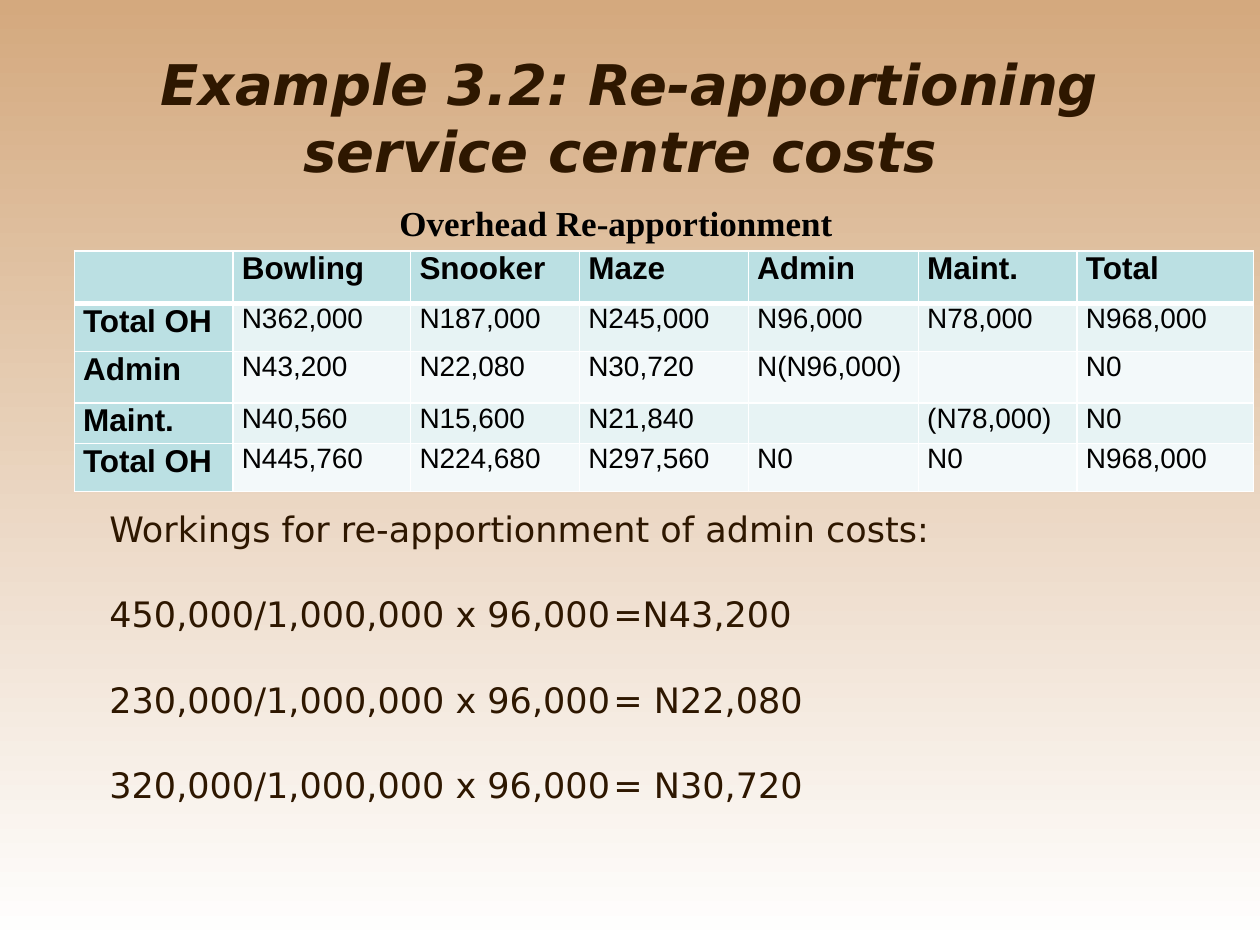
"""Build the slide on re-apportioning service centre costs."""
from dataclasses import dataclass

import pptx
import pptx.dml.color
import pptx.enum.text
import pptx.oxml
import pptx.oxml.ns
import pptx.util
from pptx.util import Inches

ALIGN = pptx.enum.text.PP_ALIGN
ANCHOR = pptx.enum.text.MSO_ANCHOR
BROWN, BLACK, WHITE = "2E1700", "000000", "FFFFFF"
HEADER_FILL, BAND_FILLS = "BBE0E3", ("E7F3F4", "F3F9FA")


@dataclass(frozen=True)
class TextStyle:
    font: str
    size: int
    color: str
    bold: bool = False
    italic: bool = False


@dataclass(frozen=True)
class TextBlock:
    left: float
    top: float
    width: float
    height: float
    lines: tuple[str, ...]
    style: TextStyle
    align: ALIGN
    anchor: ANCHOR = ANCHOR.MIDDLE
    wrap: bool = True
    gap: float = 0
    bottom_inset: float = 0.05


HEADING = TextStyle("Arial", 18, BLACK, bold=True)
FIGURE = TextStyle("Arial", 16, BLACK)

BLOCKS = (
    TextBlock(0.5, 0.3, 9, 1.25,
              ("Example 3.2: Re-apportioning service centre costs ",),
              TextStyle("DejaVu Sans", 32, BROWN, bold=True, italic=True), ALIGN.CENTER),
    TextBlock(3.06, 1.55, 3.66, 0.44, ("Overhead Re-apportionment",),
              TextStyle("Times New Roman", 20, BLACK, bold=True), ALIGN.CENTER,
              anchor=ANCHOR.TOP, wrap=False),
    TextBlock(0.77, 4.93, 9, 1.25,
              ("Workings for re-apportionment of admin costs:",
               "450,000/1,000,000 x 96,000\t=N43,200",
               "230,000/1,000,000 x 96,000\t= N22,080",
               "320,000/1,000,000 x 96,000\t= N30,720"),
              TextStyle("DejaVu Sans", 20, BROWN), ALIGN.JUSTIFY,
              gap=24.9, bottom_inset=0.74),
)

COLUMN_WIDTHS = (1.26, 1.41, 1.34, 1.34, 1.35, 1.26, 1.4)
ROW_HEIGHTS = (0.42, 0.38, 0.41, 0.32, 0.38)
OVERHEADS = (
    ("", "Bowling", "Snooker", "Maze", "Admin", "Maint.", "Total"),
    ("Total OH", "N362,000", "N187,000", "N245,000", "N96,000", "N78,000", "N968,000"),
    ("Admin", "N43,200", "N22,080", "N30,720", "N(N96,000)", "", "N0"),
    ("Maint.", "N40,560", "N15,600", "N21,840", "", "(N78,000)", "N0"),
    ("Total OH", "N445,760", "N224,680", "N297,560", "N0", "N0", "N968,000"),
)


def rgb(value: str) -> pptx.dml.color.RGBColor:
    """Turn a hex string into a colour."""
    return pptx.dml.color.RGBColor.from_string(value)


def add_span(para, text: str, style: TextStyle) -> None:
    """Append one styled run to a paragraph."""
    span = para.add_run()
    span.text = text
    span.font.name = style.font
    span.font.size = pptx.util.Pt(style.size)
    span.font.bold = style.bold
    span.font.italic = style.italic
    span.font.color.rgb = rgb(style.color)


def add_block(page, block: TextBlock) -> None:
    """Place a text box with one paragraph per line."""
    box = page.shapes.add_textbox(Inches(block.left), Inches(block.top),
                                  Inches(block.width), Inches(block.height))
    frame = box.text_frame
    frame.word_wrap = block.wrap
    frame.vertical_anchor = block.anchor
    frame.margin_bottom = Inches(block.bottom_inset)
    for index, line in enumerate(block.lines):
        para = frame.add_paragraph() if index else frame.paragraphs[0]
        para.alignment = block.align
        if index and block.gap:
            para.space_before = pptx.util.Pt(block.gap)
        add_span(para, line, block.style)


def set_borders(cell, row: int) -> None:
    """Draw white cell borders, thicker between the header and the body."""
    widths = {"lnL": 1, "lnR": 1, "lnT": 3 if row == 1 else 1, "lnB": 3 if row == 0 else 1}
    properties = cell._tc.get_or_add_tcPr()
    for position, (tag, width) in enumerate(widths.items()):
        border = pptx.oxml.parse_xml(
            f'<a:{tag} {pptx.oxml.ns.nsdecls("a")} w="{pptx.util.Pt(width)}">'
            f'<a:solidFill><a:srgbClr val="{WHITE}"/></a:solidFill></a:{tag}>')
        properties.insert(position, border)


def fill_cell(cell, text: str, row: int, column: int) -> None:
    """Write and colour one table cell."""
    is_heading = row == 0 or column == 0
    cell.margin_left = cell.margin_right = Inches(0.07)
    cell.margin_top = cell.margin_bottom = 0
    cell.fill.solid()
    cell.fill.fore_color.rgb = rgb(HEADER_FILL if is_heading else BAND_FILLS[(row - 1) % 2])
    set_borders(cell, row)
    if text:
        para = cell.text_frame.paragraphs[0]
        para.alignment = ALIGN.JUSTIFY
        add_span(para, text, HEADING if is_heading else FIGURE)


def add_overheads(page) -> None:
    """Place the overhead table."""
    table = page.shapes.add_table(
        len(ROW_HEIGHTS), len(COLUMN_WIDTHS), Inches(0.59), Inches(1.99),
        Inches(sum(COLUMN_WIDTHS)), Inches(sum(ROW_HEIGHTS))).table
    table.first_row = table.horz_banding = False
    for column, width in zip(table.columns, COLUMN_WIDTHS):
        column.width = Inches(width)
    for row, height in zip(table.rows, ROW_HEIGHTS):
        row.height = Inches(height)
    for row, texts in enumerate(OVERHEADS):
        for column, text in enumerate(texts):
            fill_cell(table.cell(row, column), text, row, column)


def paint_background(page) -> None:
    """Fade the page from tan at the top to white."""
    fill = page.background.fill
    fill.gradient()
    fill.gradient_angle = 270
    for stop, position, color in zip(fill.gradient_stops, (0, 1), ("D4A97E", WHITE)):
        stop.position = position
        stop.color.rgb = rgb(color)


def main() -> None:
    """Build and save the deck."""
    deck = pptx.Presentation()
    deck.slide_width, deck.slide_height = Inches(10), Inches(7.5)
    page = deck.slides.add_slide(deck.slide_layouts[6])
    paint_background(page)
    title, caption, workings = BLOCKS
    add_block(page, title)
    add_block(page, caption)
    add_overheads(page)
    add_block(page, workings)
    deck.save("out.pptx")


if __name__ == "__main__":
    main()
